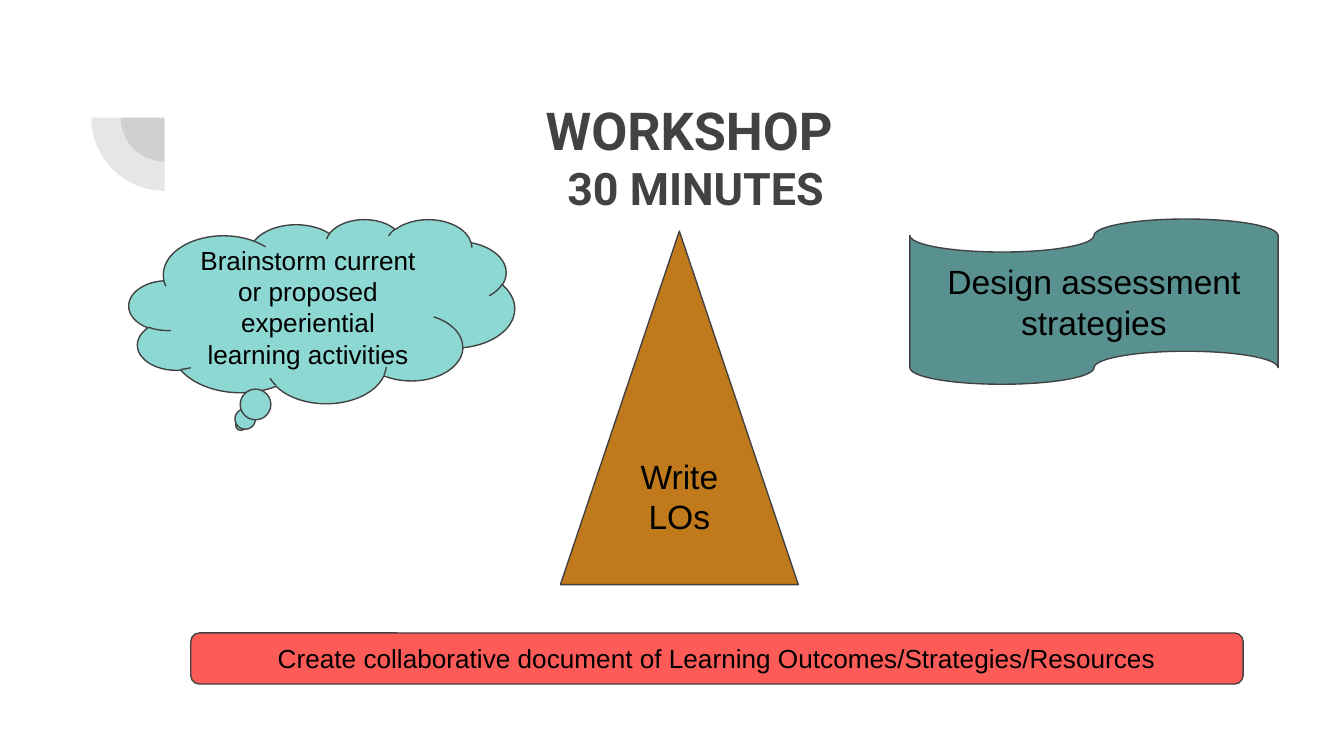
from lxml import etree
from pptx import Presentation
from pptx import util as u
from pptx.dml.color import RGBColor
from pptx.enum import shapes, text
from pptx.oxml.ns import qn

PAGE_WIDTH = 10
PAGE_HEIGHT = PAGE_WIDTH * 9 / 16
DARK = "424242"
BLACK = "000000"
PRESET = shapes.MSO_SHAPE


def color(value):
    return RGBColor.from_string(value)


def inches(box):
    return [u.Inches(length) for length in box]


def set_frame(frame, anchor):
    frame.word_wrap = True
    frame.auto_size = text.MSO_AUTO_SIZE.NONE
    frame.vertical_anchor = anchor
    frame.margin_left = frame.margin_right = u.Inches(0.1)
    frame.margin_top = frame.margin_bottom = u.Inches(0.1)


def set_para(para, words, size, font, hue, bold=False):
    para.text = words
    para.alignment = text.PP_ALIGN.CENTER
    para.line_spacing = 1.0
    para.space_before = u.Pt(0)
    para.font.size = u.Pt(size)
    para.font.name = font
    para.font.bold = bold
    para.font.color.rgb = color(hue)


def add_corner_arcs(page, box):
    """Draw two translucent concentric quarter discs, the larger filling the box."""
    left, top, width, height = box
    for scale in (0.6, 1):
        inset = (1 - scale) / 2
        arc = page.shapes.add_shape(PRESET.PIE, *inches((
            left + width * inset, top + height * inset,
            width * scale, height * scale)))
        arc.adjustments[0] = 108
        arc.adjustments[1] = 162
        arc.rotation = 270
        arc.shadow.inherit = False
        arc.line.fill.background()
        arc.fill.solid()
        arc.fill.fore_color.rgb = color(DARK)
        hue = arc.fill._xPr.find(qn("a:solidFill"))[0]
        etree.SubElement(hue, qn("a:alpha"), val="13000")


def place_title(page, box, lines):
    title = page.shapes.title
    title.left, title.top, title.width, title.height = inches(box)
    frame = title.text_frame
    set_frame(frame, text.MSO_ANCHOR.TOP)
    for index, (words, size) in enumerate(lines):
        para = frame.add_paragraph() if index else frame.paragraphs[0]
        set_para(para, words, size, "Roboto", DARK, bold=True)


def add_task(page, box, preset, fill, words, size, adjustments=()):
    task = page.shapes.add_shape(preset, *inches(box))
    for index, value in enumerate(adjustments):
        task.adjustments[index] = value
    task.shadow.inherit = False
    task.fill.solid()
    task.fill.fore_color.rgb = color(fill)
    task.line.color.rgb = color(DARK)
    task.line.width = u.Pt(0.75)
    set_frame(task.text_frame, text.MSO_ANCHOR.MIDDLE)
    set_para(task.text_frame.paragraphs[0], words, size, "Arial", BLACK)


def build_workshop(deck):
    page = deck.slides.add_slide(deck.slide_layouts[5])
    add_corner_arcs(page, (0.68, 0.33, 1.09, 1.09))
    place_title(page, (1.33, 0.63, 7.69, 1.09),
                [("WORKSHOP ", 28), ("30 MINUTES", 24)])
    add_task(page, (0.96, 1.63, 2.87, 1.37), PRESET.CLOUD_CALLOUT, "8DD8D3",
             "Brainstorm current or proposed experiential learning activities",
             14, (-0.21, 0.62))
    add_task(page, (4.17, 1.72, 1.77, 2.63), PRESET.ISOSCELES_TRIANGLE,
             "C0791B", "Write LOs", 18)
    add_task(page, (6.77, 1.63, 2.74, 1.23), PRESET.FLOWCHART_PUNCHED_TAPE,
             "599191", "Design assessment strategies", 18)
    add_task(page, (1.42, 4.71, 7.83, 0.38), PRESET.ROUNDED_RECTANGLE, "FD5B58",
             "Create collaborative document of Learning "
             "Outcomes/Strategies/Resources", 14)


def main():
    deck = Presentation()
    deck.slide_width, deck.slide_height = inches((PAGE_WIDTH, PAGE_HEIGHT))
    build_workshop(deck)
    deck.save("out.pptx")


if __name__ == "__main__":
    main()
